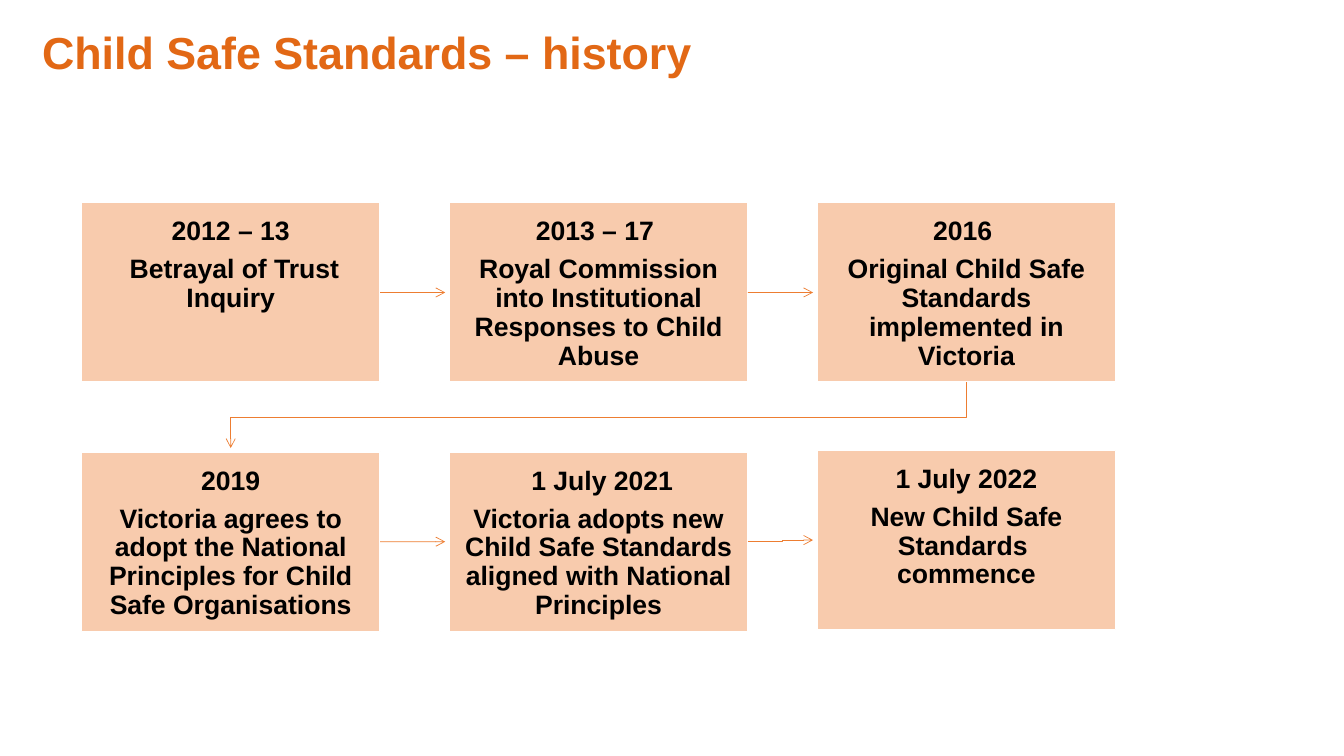
from lxml import etree
from pptx import Presentation
from pptx.dml.color import RGBColor as Rgb
from pptx.enum.shapes import MSO_CONNECTOR as Conn, MSO_SHAPE as Kind
from pptx.enum.text import MSO_ANCHOR as Anchor, PP_ALIGN as Align
from pptx.oxml.ns import qn
from pptx.util import Cm, Pt

# Content: date, then the lines of the event
TITLE = "Child Safe Standards – history"
STEPS = [
    ("2012 – 13", " Betrayal of Trust Inquiry"),
    ("2013 – 17 ", "Royal Commission into Institutional Responses to Child Abuse"),
    ("2016 ", "Original Child Safe Standards implemented in Victoria"),
    ("2019", "Victoria agrees to adopt the National Principles for Child Safe Organisations"),
    (" 1 July 2021", "Victoria adopts new Child Safe Standards aligned with National Principles"),
    ("1 July 2022", "New Child Safe Standards ", "commence"),
]

THEME = {
    "font": "Arial", "title": Rgb(0xE2, 0x68, 0x15), "text": Rgb(0, 0, 0),
    "box": Rgb(0xF8, 0xCB, 0xAD), "edge": Rgb(255, 255, 255),
    "arrow": Rgb(0xED, 0x7D, 0x31),
    "head": Pt(32), "body": Pt(19), "after": Pt(6.65),
}

# Grid, in centimetres
COLS, LEFT, PITCH = 3, 2.05, 9.27
WIDE, HIGH, GAP = 7.53, 4.52, 0.1
TOPS = [5.11, 5.11, 5.11, 11.39, 11.39, 11.35]

deck = Presentation()
deck.slide_width, deck.slide_height = Cm(33.87), Cm(19.05)
slide = deck.slides.add_slide(deck.slide_layouts[6])
shapes = slide.shapes


def write(para, text, size, color):
    para.line_spacing = 0.9
    run = para.add_run()
    run.text = text
    font = run.font
    font.name, font.size, font.bold = THEME["font"], size, True
    font.color.rgb = color


def spot(num):
    return LEFT + num % COLS * PITCH, TOPS[num]


def add_box(num, lines):
    left, top = spot(num)
    box = shapes.add_shape(Kind.RECTANGLE, Cm(left), Cm(top), Cm(WIDE), Cm(HIGH))
    box.shadow.inherit = False
    box.fill.solid()
    box.fill.fore_color.rgb = THEME["box"]
    box.line.color.rgb = THEME["edge"]
    box.line.width = Pt(1)
    frame = box.text_frame
    frame.word_wrap = True
    frame.vertical_anchor = Anchor.TOP
    frame.margin_left = frame.margin_right = Cm(0.38)
    frame.margin_top = frame.margin_bottom = Cm(0.38)
    for pos, text in enumerate(lines):
        para = frame.add_paragraph() if pos else frame.paragraphs[0]
        para.alignment = Align.CENTER
        if pos in (0, len(lines) - 1):
            para.space_after = THEME["after"]
        write(para, text, THEME["body"], THEME["text"])
    return box


def style(item):
    item.line.color.rgb = THEME["arrow"]
    item.line.width = Pt(0.5)
    line = item.line._get_or_add_ln()
    etree.SubElement(line, qn("a:tailEnd"), type="arrow")


def add_arrow(box, num):
    left, top = spot(num)
    mid = Cm(top + HIGH / 2)
    arrow = shapes.add_connector(
        Conn.STRAIGHT, Cm(left + WIDE), mid, Cm(left + PITCH - GAP), mid)
    arrow.begin_connect(box, 3)
    style(arrow)
    etree.SubElement(arrow._element.spPr, qn("a:effectLst"))


def add_bend(points):
    first, *rest = [(Cm(x), Cm(y)) for x, y in points]
    form = shapes.build_freeform(*first)
    form.add_line_segments(rest, close=False)
    bend = form.convert_to_shape()
    bend.shadow.inherit = False
    bend.fill.background()
    style(bend)


# Title
head = shapes.add_textbox(Cm(0.81), Cm(0.66), Cm(27.97), Cm(4.27)).text_frame
head.word_wrap = True
write(head.paragraphs[0], TITLE, THEME["head"], THEME["title"])

# Boxes
boxes = [add_box(num, lines) for num, lines in enumerate(STEPS)]

# Straight arrows between level neighbours
for num in (0, 1, 3):
    add_arrow(boxes[num], num)

# Bend from the end of the first row to the start of the second
(right, top), (left, low) = spot(2), spot(3)
start, end = right + WIDE / 2, left + WIDE / 2
turn = 10.51
add_bend([(start, top + HIGH), (start, turn), (end, turn), (end, low - GAP)])

# Small step up to the last box
(left, top), (right, high) = spot(4), spot(5)
side, mid, goal = left + WIDE, top + HIGH / 2, high + HIGH / 2
step = (side + right) / 2
add_bend([(side, mid), (step, mid), (step, goal), (right - GAP, goal)])

deck.save("out.pptx")
